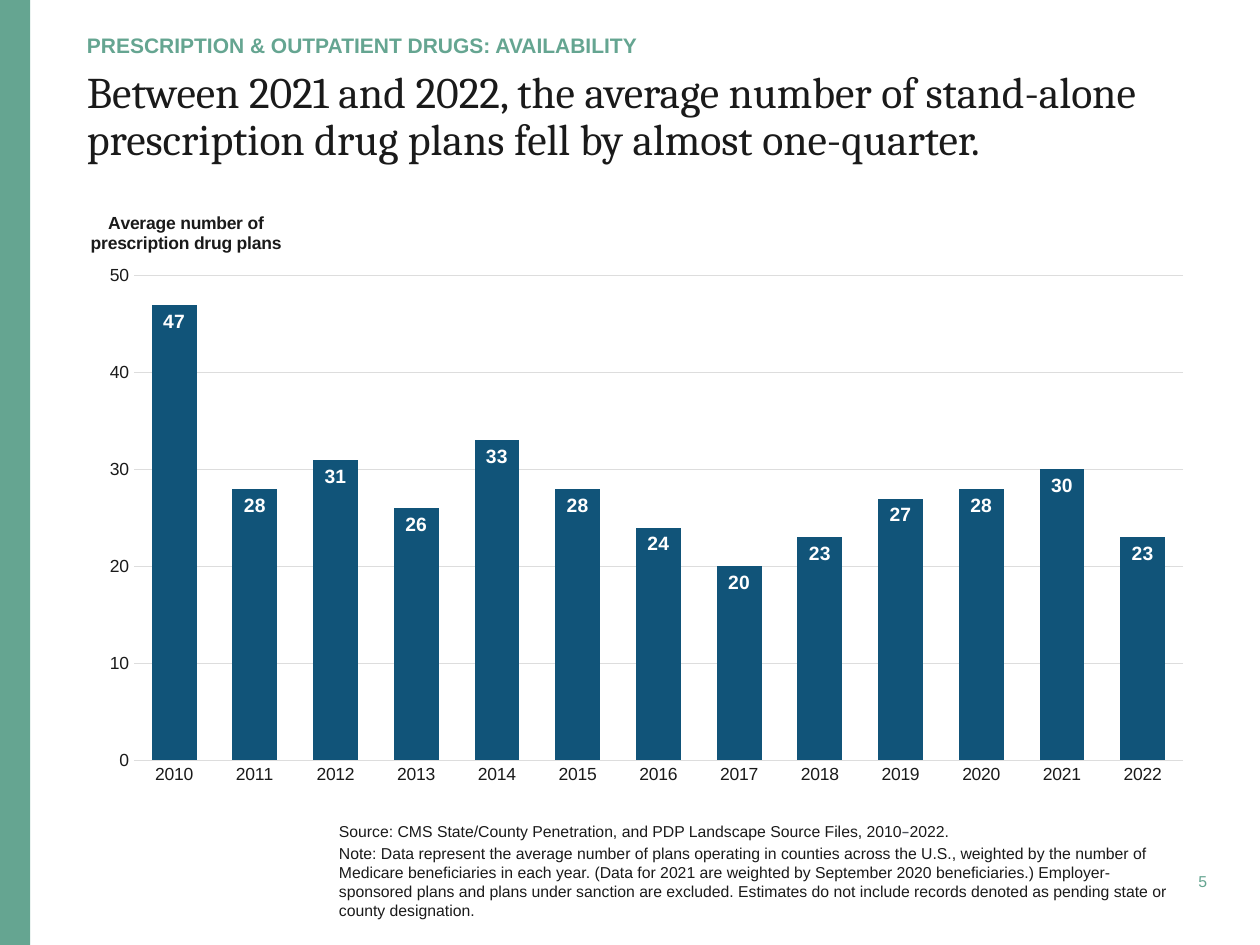
from lxml import etree
from pptx import Presentation
from pptx import util as u
from pptx.chart.data import CategoryChartData
from pptx.dml.color import RGBColor
from pptx.enum import chart as ch, shapes, text
from pptx.oxml import parse_xml
from pptx.oxml.ns import nsdecls, qn

# Content
EYEBROW = "PRESCRIPTION & OUTPATIENT DRUGS: AVAILABILITY"
HEADLINE = ("Between 2021 and 2022, the average number of stand-alone "
            "prescription drug plans fell by almost one-quarter.")
AXIS_TITLE = "Average number of\nprescription drug plans"
YEARS = [str(year) for year in range(2010, 2023)]
PLANS = [47, 28, 31, 26, 33, 28, 24, 20, 23, 27, 28, 30, 23]
SOURCE = ["Source: CMS State/County Penetration, and PDP Landscape Source Files, 2010",
          "–", "2022."]
NOTE = ("Note: Data represent the average number of plans operating in counties across "
        "the U.S., weighted by the number of Medicare beneficiaries in each year. (Data "
        "for 2021 are weighted by September 2020 beneficiaries.) Employer-sponsored plans "
        "and plans under sanction are excluded. Estimates do not include records denoted "
        "as pending state or county designation.")
PAGE = "5"

COLORS = {"green": "65A591", "ink": "1A1A1A", "bar": "115479",
          "grid": "DDDDDD", "white": "FFFFFF", "dash": "4C515A"}
LEFT = 0.69


def rgb(name):
    return RGBColor.from_string(COLORS[name])


def style(font, size, color, bold=False, name="Arial"):
    font.size, font.bold, font.name = u.Pt(size), bold, name
    font.color.rgb = rgb(color)


def place(box, left, top, width, height, anchor=text.MSO_ANCHOR.TOP, wrap=True):
    box.left, box.top, box.width, box.height = map(u.Inches, (left, top, width, height))
    frame = box.text_frame
    frame.margin_left = frame.margin_right = frame.margin_top = frame.margin_bottom = 0
    frame.auto_size = text.MSO_AUTO_SIZE.NONE
    frame.word_wrap, frame.vertical_anchor = wrap, anchor
    return frame


def manual_layout(x, y, w=None, h=None):
    parts = [("layoutTarget", "inner")] if w else []
    parts += [("xMode", "edge"), ("yMode", "edge"), ("x", x), ("y", y)]
    parts += [("w", w), ("h", h)] if w else []
    inner = "".join(f'<c:{tag} val="{val}"/>' for tag, val in parts)
    return parse_xml(f'<c:layout {nsdecls("c")}><c:manualLayout>{inner}'
                     '</c:manualLayout></c:layout>')


def set_layout(parent, layout, after=None):
    for old in parent.findall(qn("c:layout")):
        parent.remove(old)
    if after is None:
        parent.insert(0, layout)
    else:
        after.addnext(layout)


def add_headings(slide):
    headline = place(slide.shapes.title, LEFT, 0.56, 8.85, 0.8)
    headline.text = HEADLINE
    line = headline.paragraphs[0]
    line.alignment, line.line_spacing = text.PP_ALIGN.LEFT, 0.9
    style(line.font, 25, "ink", name="Cambria")

    eyebrow = place(slide.placeholders[1], LEFT, 0.19, 8.66, 0.27, text.MSO_ANCHOR.BOTTOM)
    eyebrow.text = EYEBROW
    line = eyebrow.paragraphs[0]
    line.alignment, line.space_before = text.PP_ALIGN.LEFT, u.Pt(0)
    style(line.font, 12, "green", bold=True)


def add_plan_chart(slide):
    data = CategoryChartData(number_format="0")
    data.categories = YEARS
    data.add_series("Average number of plans", PLANS)
    chart = slide.shapes.add_chart(
        ch.XL_CHART_TYPE.COLUMN_CLUSTERED, u.Inches(LEFT), u.Inches(1.6),
        u.Inches(8.85), u.Inches(4.82), data).chart
    chart.has_legend = chart.has_title = False
    style(chart.font, 10, "ink")

    # Columns and their labels
    plot = chart.plots[0]
    plot.gap_width, plot.overlap, plot.vary_by_categories = 80, 100, False
    columns = plot.series[0]
    columns.format.fill.solid()
    columns.format.fill.fore_color.rgb = rgb("bar")
    labels = columns.data_labels
    labels.show_value, labels.number_format = True, "0"
    labels.number_format_is_linked = False
    labels.position = ch.XL_LABEL_POSITION.INSIDE_END
    style(labels.font, 11, "white", bold=True)

    # Axes
    years, counts = chart.category_axis, chart.value_axis
    for axis in (years, counts):
        axis.major_tick_mark = axis.minor_tick_mark = ch.XL_TICK_MARK.NONE
        style(axis.tick_labels.font, 10, "ink")
    counts.minimum_scale, counts.maximum_scale, counts.major_unit = 0, 50, 10
    counts.tick_labels.number_format = "0"
    counts.tick_labels.number_format_is_linked = False
    counts.format.line.fill.background()
    for line in (years.format.line, counts.major_gridlines.format.line):
        line.color.rgb, line.width = rgb("grid"), u.Pt(0.75)

    # Level axis title above the plot
    title = counts.axis_title
    title.text_frame.text = AXIS_TITLE
    for paragraph in title.text_frame.paragraphs:
        style(paragraph.font, 10, "ink", bold=True)
    body = title._element.find(".//" + qn("a:bodyPr"))
    body.set("rot", "0")
    body.set("vert", "horz")
    set_layout(title._element, manual_layout(0, 0.01),
               after=title._element.find(qn("c:tx")))
    set_layout(chart._chartSpace.chart.plotArea, manual_layout(0.042, 0.122, 0.941, 0.798))


def add_footer(slide):
    notes = place(slide.shapes.add_textbox(0, 0, 0, 0), 2.69, 6.52, 6.59, 0.85)
    source = notes.paragraphs[0]
    for part in SOURCE:
        run = source.add_run()
        run.text = part
        if part == "–":
            style(run.font, 9, "dash", name="Cabin")
    style(source.font, 9, "ink")
    note = notes.add_paragraph()
    note.text, note.space_before = NOTE, u.Pt(1.8)
    style(note.font, 9, "ink")

    page = place(slide.shapes.add_textbox(0, 0, 0, 0), 9.27, 6.88, 0.31, 0.22,
                 text.MSO_ANCHOR.MIDDLE, wrap=False)
    page.text = PAGE
    page.paragraphs[0].alignment = text.PP_ALIGN.RIGHT
    style(page.paragraphs[0].font, 9, "green")


def main():
    deck = Presentation()
    deck.slide_width, deck.slide_height = u.Inches(10), u.Inches(7.5)
    slide = deck.slides.add_slide(deck.slide_layouts[0])

    # Side band
    band = slide.shapes.add_shape(shapes.MSO_SHAPE.RECTANGLE, 0, 0,
                                  u.Inches(0.24), deck.slide_height)
    band.shadow.inherit = False
    band.fill.solid()
    band.fill.fore_color.rgb = rgb("green")
    band.line.fill.background()

    add_headings(slide)
    add_plan_chart(slide)
    add_footer(slide)
    deck.save("out.pptx")


if __name__ == "__main__":
    main()
